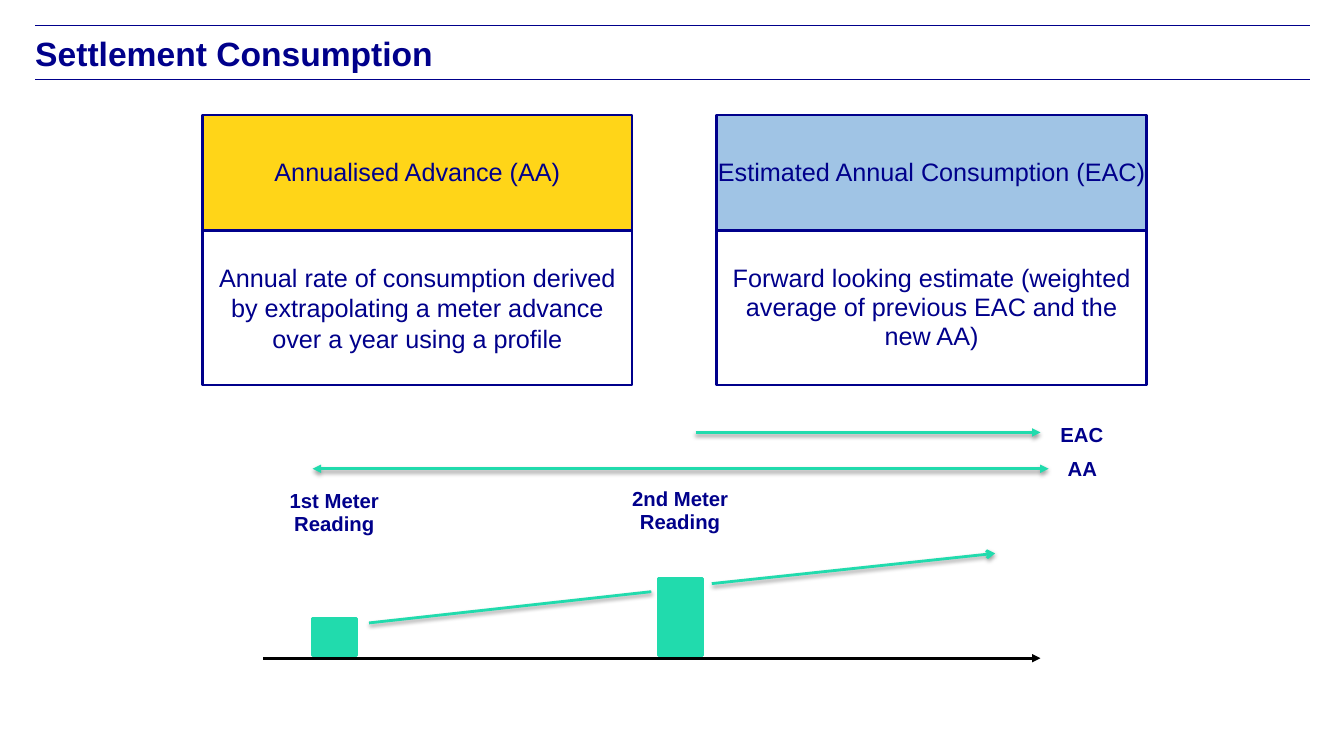
from lxml import etree
from pptx import Presentation
from pptx.dml.color import RGBColor
from pptx.enum.shapes import MSO_CONNECTOR, MSO_SHAPE
from pptx.enum.text import MSO_ANCHOR, PP_ALIGN
from pptx.oxml.ns import qn
from pptx.util import Inches, Pt

COLORS = {"navy": "00008B", "gold": "FFD518", "blue": "A0C4E5",
          "white": "FFFFFF", "green": "21DBAD", "black": "000000"}
TITLE = "Settlement Consumption"
RULES_Y = [0.25, 0.79]
CARDS = [
    (2.01, "gold", "Annualised Advance (AA)",
     "Annual rate of consumption derived by extrapolating a meter advance over a year using a profile", 1),
    (7.11, "blue", "Estimated Annual Consumption (EAC)",
     "Forward looking estimate (weighted average of previous EAC and the new AA)", 0.95),
]
CARD_TOP, CARD_W, HEAD_H, BODY_H = 1.14, 4.26, 1.15, 1.53
LABELS = [
    ("1st Meter Reading", 2.46, 4.81, 1.71, 0.56),
    ("2nd Meter Reading", 5.89, 4.79, 1.71, 0.56),
    ("AA", 10.47, 4.49, 0.53, 0.33),
    ("EAC", 10.09, 4.16, 1.28, 0.33),
]
BARS = [(3.1, 0.36), (6.53, 0.76)]
BAR_W, BAR_BASE = 0.44, 6.5
AXIS = (2.61, 6.53, 10.32, 6.53)
ARROWS = [
    ((3.1, 4.65, 10.4, 4.65), "triangle", "triangle"),
    ((6.9, 4.29, 10.32, 4.29), None, "triangle"),
    ((3.66, 6.18, 6.46, 5.87), None, None),
    ((7.06, 5.79, 9.87, 5.49), None, "arrow"),
]


def rgb(name):
    return RGBColor.from_string(COLORS[name])


def write(sp, text, size, bold=False, align=PP_ALIGN.CENTER,
          anchor=MSO_ANCHOR.MIDDLE, spacing=1, inset=(0.09, 0.05)):
    tf = sp.text_frame
    tf.word_wrap = True
    tf.vertical_anchor = anchor
    tf.margin_left = tf.margin_right = Inches(inset[0])
    tf.margin_top = tf.margin_bottom = Inches(inset[1])
    p = tf.paragraphs[0]
    p.alignment = align
    p.line_spacing = spacing
    r = p.add_run()
    r.text = text
    r.font.name = "Arial"
    r.font.size = Pt(size)
    r.font.bold = bold
    r.font.color.rgb = rgb("navy")


def box(x, y, w, h, fill, line):
    sp = s.shapes.add_shape(MSO_SHAPE.RECTANGLE, Inches(x), Inches(y), Inches(w), Inches(h))
    sp.shadow.inherit = False
    sp.fill.solid()
    sp.fill.fore_color.rgb = rgb(fill)
    sp.line.color.rgb = rgb(line)
    sp.line.width = Pt(2)
    return sp


def connect(ends, color, width, head=None, tail=None, shadow=False):
    ln = s.shapes.add_connector(MSO_CONNECTOR.STRAIGHT, *map(Inches, ends))
    ln.line.color.rgb = rgb(color)
    ln.line.width = Pt(width)
    for tag, kind in (("a:headEnd", head), ("a:tailEnd", tail)):
        if kind:
            etree.SubElement(ln.line._get_or_add_ln(), qn(tag), type=kind)
    effects = etree.SubElement(ln._element.spPr, qn("a:effectLst"))
    if shadow:
        outer = etree.SubElement(effects, qn("a:outerShdw"), blurRad=str(Pt(3.1)),
                                 dist=str(Pt(1.6)), dir="5400000", rotWithShape="0")
        shade = etree.SubElement(outer, qn("a:srgbClr"), val=COLORS["black"])
        etree.SubElement(shade, qn("a:alpha"), val="38000")


def textbox(x, y, w, h):
    return s.shapes.add_textbox(Inches(x), Inches(y), Inches(w), Inches(h))


prs = Presentation()
prs.slide_width, prs.slide_height = Inches(13.33), Inches(7.5)
s = prs.slides.add_slide(prs.slide_layouts[6])

for y in RULES_Y:
    connect((0.35, y, 12.99, y), "navy", 0.5)
write(textbox(0.35, 0.28, 12.64, 0.49), TITLE, 24, True, PP_ALIGN.LEFT, inset=(0, 0))

for x, fill, heading, body, spacing in CARDS:
    write(box(x, CARD_TOP, CARD_W, HEAD_H, fill, "navy"), heading, 18, spacing=0.9, inset=(0, 0))
    write(box(x, CARD_TOP + HEAD_H, CARD_W, BODY_H, "white", "navy"), body, 18, spacing=spacing)

connect(AXIS, "black", 2, tail="triangle")
for x, h in BARS:
    box(x, BAR_BASE - h, BAR_W, h, "green", "green")
for ends, head, tail in ARROWS:
    connect(ends, "green", 2, head, tail, True)
for text, x, y, w, h in LABELS:
    write(textbox(x, y, w, h), text, 14.5, True, anchor=MSO_ANCHOR.TOP, spacing=0.95)

prs.save("out.pptx")
